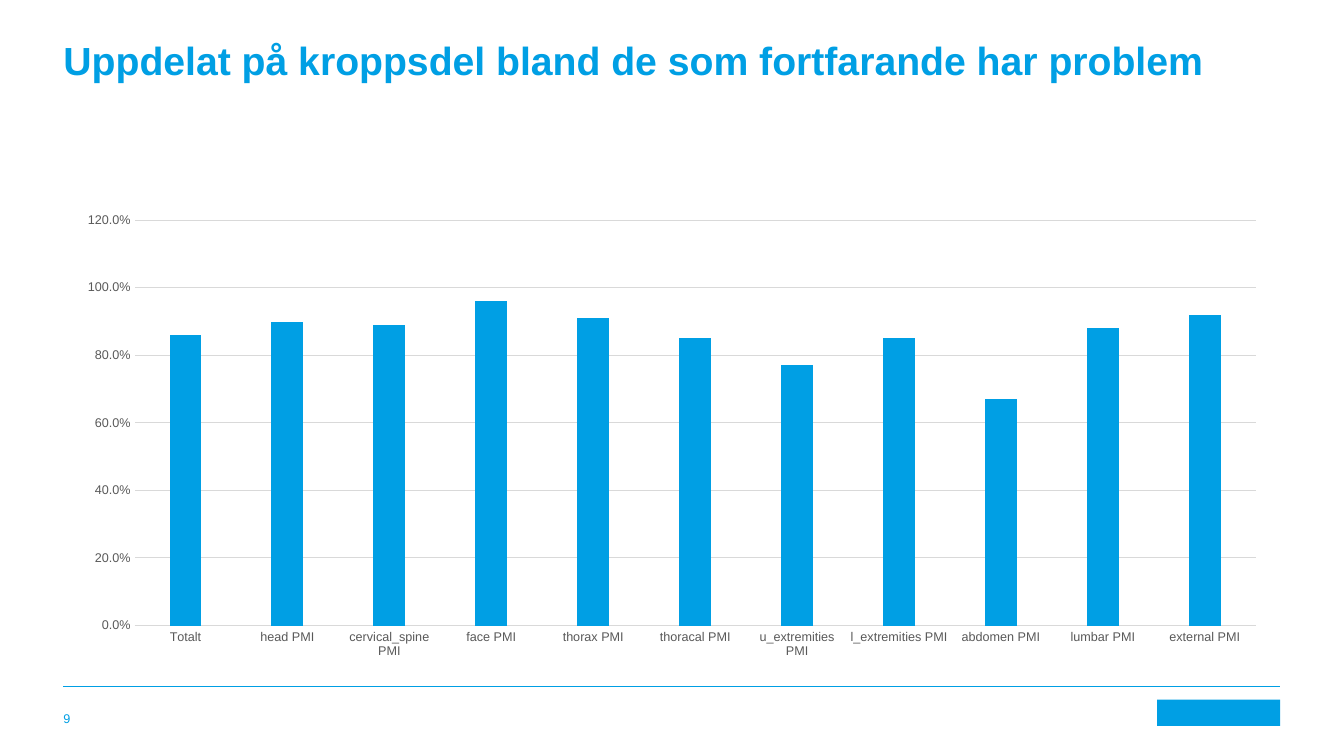
import pptx
import pptx.chart.data
import pptx.dml.color
import pptx.enum.chart
import pptx.enum.shapes
import pptx.enum.text
import pptx.util
from pptx.util import Cm, Pt
from lxml import etree

BLUE = pptx.dml.color.RGBColor(0x00, 0x9F, 0xE4)
GREY = pptx.dml.color.RGBColor(0x59, 0x59, 0x59)
GRID = pptx.dml.color.RGBColor(0xD9, 0xD9, 0xD9)
FONT = "Arial"
LEFT, WIDTH = Cm(1.6), Cm(30.66)

prs = pptx.Presentation()
prs.slide_width, prs.slide_height = Cm(33.87), Cm(19.05)
s = prs.slides.add_slide(prs.slide_layouts[6])


def add_text(text, top, width, height, size, bold, anchor):
    tf = s.shapes.add_textbox(LEFT, top, width, height).text_frame
    tf.word_wrap = True
    tf.margin_left = tf.margin_right = tf.margin_top = tf.margin_bottom = 0
    tf.vertical_anchor = anchor
    r = tf.paragraphs[0].add_run()
    r.text = text
    r.font.name, r.font.size, r.font.bold = FONT, Pt(size), bold
    r.font.color.rgb = BLUE


# Title
add_text("Uppdelat på kroppsdel bland de som fortfarande har problem",
         Cm(0.91), WIDTH, Cm(4.19), 28, True, pptx.enum.text.MSO_ANCHOR.TOP)

# Column chart
shares = {
    "Totalt": 0.86,
    "head PMI": 0.9,
    "cervical_spine PMI": 0.89,
    "face PMI": 0.96,
    "thorax PMI": 0.91,
    "thoracal PMI": 0.85,
    "u_extremities PMI": 0.77,
    "l_extremities PMI": 0.85,
    "abdomen PMI": 0.67,
    "lumbar PMI": 0.88,
    "external PMI": 0.92,
}
data = pptx.chart.data.CategoryChartData(number_format="0.0%")
data.categories = list(shares)
data.add_series("Series 1", list(shares.values()))
chart = s.shapes.add_chart(pptx.enum.chart.XL_CHART_TYPE.COLUMN_CLUSTERED,
                           LEFT, Cm(5.13), WIDTH, Cm(11.71), data).chart
chart.has_legend = False
chart.has_title = False
chart.font.name, chart.font.size = FONT, Pt(10)

plot = chart.plots[0]
plot.gap_width, plot.overlap = 219, -27
plot.vary_by_categories = False
fill = plot.series[0].format.fill
fill.solid()
fill.fore_color.rgb = BLUE

# Axes
cat_axis, val_axis = chart.category_axis, chart.value_axis
for axis in (cat_axis, val_axis):
    axis.major_tick_mark = pptx.enum.chart.XL_TICK_MARK.NONE
    axis.minor_tick_mark = pptx.enum.chart.XL_TICK_MARK.NONE
    font = axis.tick_labels.font
    font.name, font.size, font.color.rgb = FONT, Pt(9), GREY
val_axis.minimum_scale, val_axis.maximum_scale, val_axis.major_unit = 0, 1.2, 0.2
val_axis.tick_labels.number_format = "0.0%"
val_axis.tick_labels.number_format_is_linked = False
val_axis.format.line.fill.background()
for line in (cat_axis.format.line, val_axis.major_gridlines.format.line):
    line.color.rgb, line.width = GRID, Pt(0.75)

# Footer rule
rule = s.shapes.add_connector(pptx.enum.shapes.MSO_CONNECTOR.STRAIGHT,
                              LEFT, Cm(17.3), LEFT + WIDTH, Cm(17.3))
rule.line.color.rgb, rule.line.width = BLUE, Pt(0.5)
etree.SubElement(rule.element.spPr, pptx.oxml.ns.qn("a:effectLst"))

# Page number
add_text("9", Cm(17.63), Cm(1.47), Cm(0.66), 9, False,
         pptx.enum.text.MSO_ANCHOR.BOTTOM)

# Plain block in the footer corner
block = s.shapes.add_shape(pptx.enum.shapes.MSO_SHAPE.RECTANGLE,
                           Cm(29.16), Cm(17.63), Cm(3.1), Cm(0.66))
block.shadow.inherit = False
block.fill.solid()
block.fill.fore_color.rgb = BLUE
block.line.fill.background()

prs.save("out.pptx")
